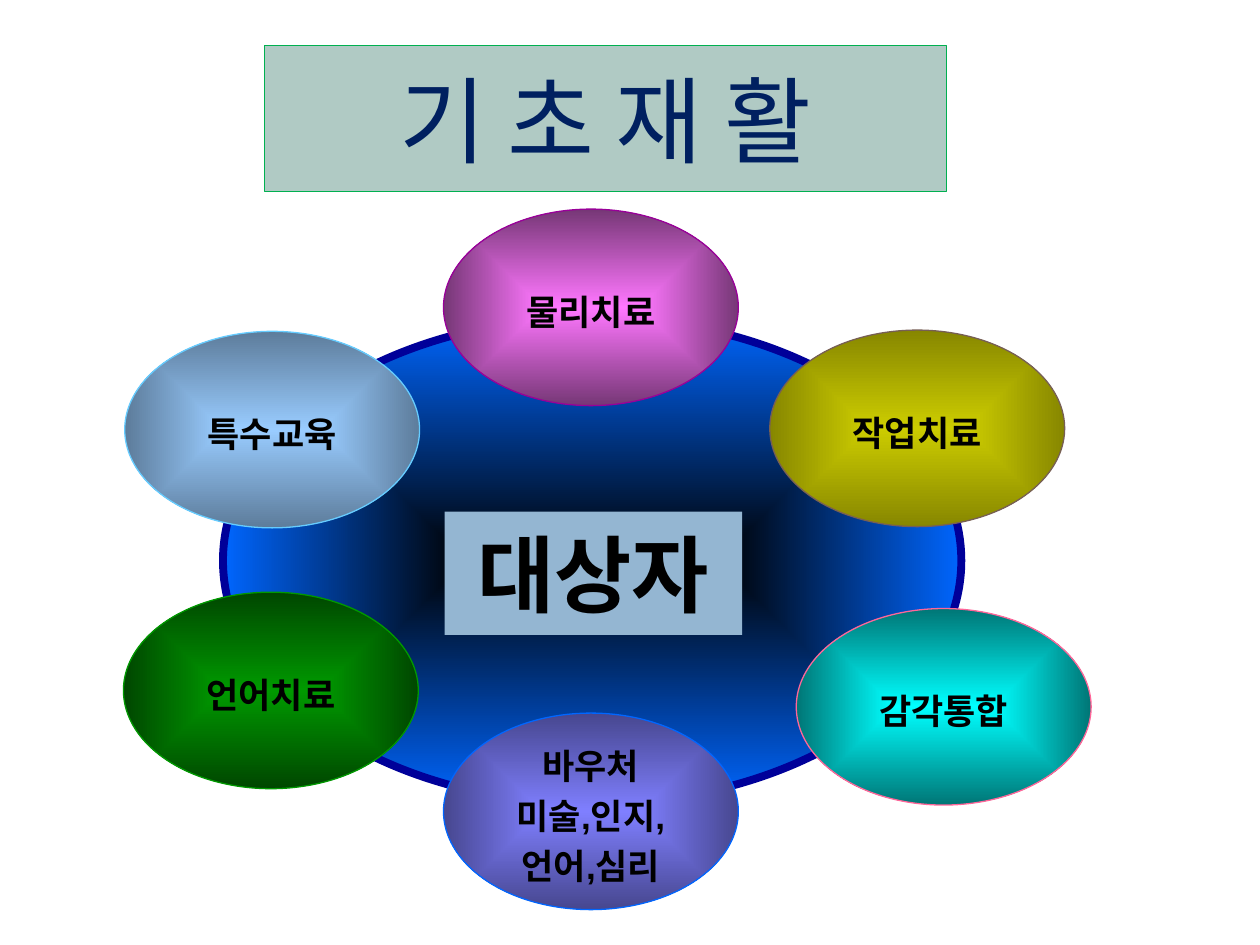
from lxml.etree import SubElement
from pptx import Presentation
from pptx.dml.color import RGBColor
from pptx.enum.shapes import MSO_SHAPE
from pptx.enum.text import MSO_ANCHOR, PP_ALIGN
from pptx.oxml.ns import qn
from pptx.util import Inches, Pt

BLACK = RGBColor(0x00, 0x00, 0x00)
NAVY = RGBColor(0x00, 0x20, 0x60)
DEEP = RGBColor(0x00, 0x00, 0x99)
BLUE = RGBColor(0x00, 0x66, 0xFF)
SAGE = RGBColor(0xB0, 0xCA, 0xC4)
LEAF = RGBColor(0x00, 0xB0, 0x50)
STEEL = RGBColor(0x94, 0xB6, 0xD2)
PINK = RGBColor(0xFF, 0x77, 0xFF)
PLUM = RGBColor(0x76, 0x37, 0x76)
PURPLE = RGBColor(0x99, 0x00, 0x99)
LILAC = RGBColor(0x7F, 0x7F, 0xFF)
INDIGO = RGBColor(0x47, 0x47, 0x8F)
SKY = RGBColor(0x99, 0xCC, 0xFF)
SLATE = RGBColor(0x5D, 0x7C, 0x9B)
AZURE = RGBColor(0x66, 0xCC, 0xFF)
GREEN = RGBColor(0x00, 0x99, 0x00)
FOREST = RGBColor(0x00, 0x47, 0x00)
CYAN = RGBColor(0x00, 0xFF, 0xFF)
TEAL = RGBColor(0x00, 0x76, 0x76)
ROSE = RGBColor(0xFF, 0x66, 0x99)
YELLOW = RGBColor(0xCC, 0xCC, 0x00)
OLIVE = RGBColor(0x87, 0x87, 0x00)
BROWN = RGBColor(0x77, 0x5F, 0x55)

deck = Presentation()
deck.slide_width, deck.slide_height = Inches(10), Inches(7.5)
slide = deck.slides.add_slide(deck.slide_layouts[6])


def add_shape(kind, box, fill, line=None, width=0.75):
    """Add a shape; a pair of fills runs from the centre to the edge."""
    shape = slide.shapes.add_shape(kind, *[Inches(n) for n in box])
    shape.shadow.inherit = False
    if len(fill) == 2:
        shape.fill.gradient()
        for stop, color in zip(shape.fill.gradient_stops, fill):
            stop.color.rgb = color
        grad = shape.element.spPr.find(qn("a:gradFill"))
        grad.remove(grad.find(qn("a:lin")))
        focus = SubElement(grad, qn("a:path"), path="shape")
        SubElement(focus, qn("a:fillToRect"), l="50000", t="50000", r="50000", b="50000")
    else:
        shape.fill.solid()
        shape.fill.fore_color.rgb = fill[0]
    if line is None:
        shape.line.fill.background()
    else:
        shape.line.color.rgb = line
        shape.line.width = Pt(width)
    return shape


def add_text(shape, text, size, font="Arial", color=BLACK, bold=True, space=1.0):
    frame = shape.text_frame
    frame.text = text
    frame.word_wrap = False
    frame.vertical_anchor = MSO_ANCHOR.MIDDLE
    for para in frame.paragraphs:
        para.alignment = PP_ALIGN.CENTER
        para.line_spacing = space
        para.font.name = font
        para.font.size = Pt(size)
        para.font.bold = bold
        para.font.color.rgb = color


# Large ellipse behind the therapies
add_shape(MSO_SHAPE.OVAL, (1.77, 2.52, 5.86, 3.86), (BLACK, BLUE), DEEP, 4.5)

# Title
title = add_shape(MSO_SHAPE.RECTANGLE, (2.1, 0.36, 5.41, 1.16), (SAGE,), LEAF)
add_text(title, "기 초 재 활", 54, "Noto Sans CJK KR", NAVY, False)

# Ring of therapies: text, left, top, centre colour, edge colour, line
ring = [
    ("물리치료", 3.52, 1.66, PINK, PLUM, PURPLE),
    ("바우처\n미술,인지,\n언어,심리", 3.52, 5.66, LILAC, INDIGO, BLUE),
    ("특수교육", 0.99, 2.63, SKY, SLATE, AZURE),
    ("언어치료", 0.98, 4.7, GREEN, FOREST, GREEN),
    ("감각통합", 6.32, 4.83, CYAN, TEAL, ROSE),
    ("작업치료", 6.11, 2.62, YELLOW, OLIVE, BROWN),
]
for text, left, top, core, edge, line in ring:
    oval = add_shape(MSO_SHAPE.OVAL, (left, top, 2.34, 1.56), (core, edge), line)
    add_text(oval, text, 20, space=1.2)

# Person at the centre
center = add_shape(MSO_SHAPE.RECTANGLE, (3.53, 4.06, 2.36, 0.98), (STEEL,))
add_text(center, "대상자", 48)

deck.save("out.pptx")
